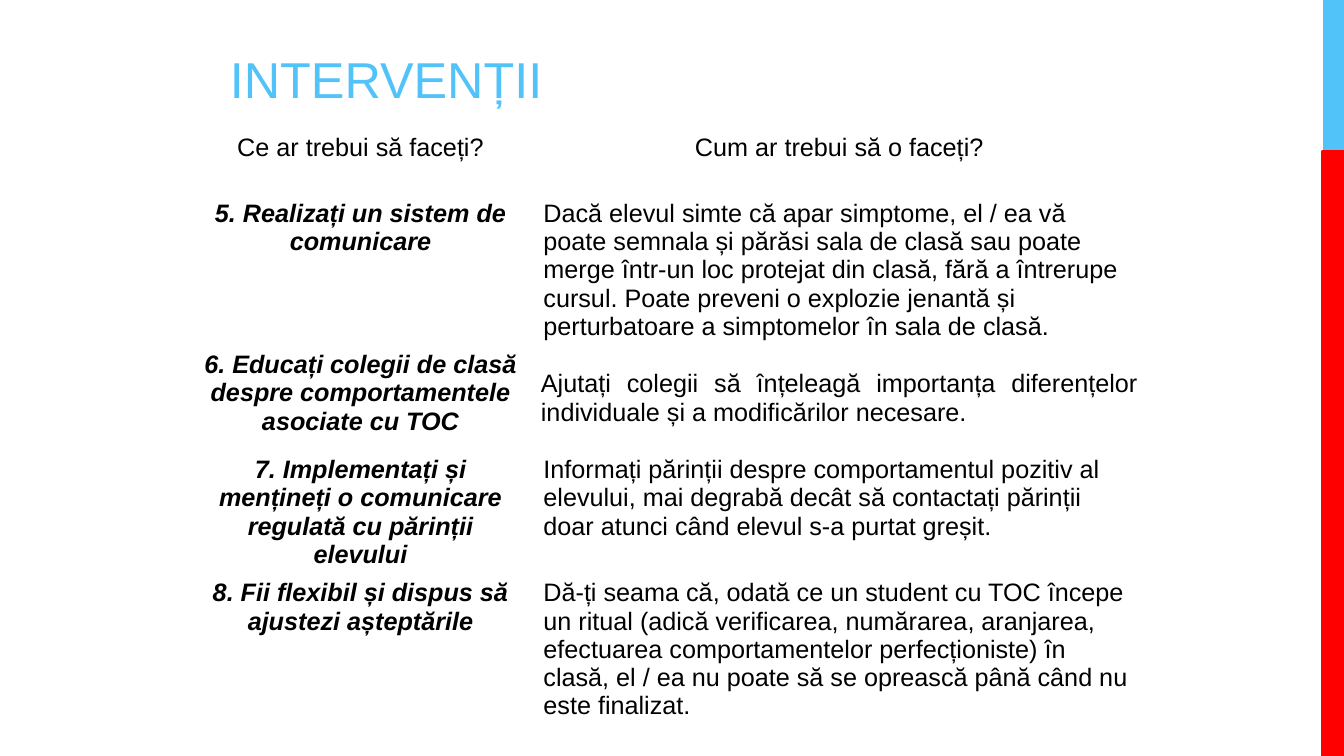
from pptx import Presentation
from pptx.dml.color import RGBColor
from pptx.enum.shapes import MSO_SHAPE
from pptx.enum.text import MSO_ANCHOR, MSO_AUTO_SIZE, PP_ALIGN
from pptx.util import Pt

RECT = MSO_SHAPE.RECTANGLE
TOP, MIDDLE, BOTTOM = MSO_ANCHOR.TOP, MSO_ANCHOR.MIDDLE, MSO_ANCHOR.BOTTOM
LEFT, CENTER, JUSTIFY = PP_ALIGN.LEFT, PP_ALIGN.CENTER, PP_ALIGN.JUSTIFY
NO_FIT = MSO_AUTO_SIZE.NONE

BLUE = RGBColor(0x51, 0xC3, 0xF9)
RED = RGBColor(0xFF, 0x00, 0x00)
BLACK = RGBColor(0x00, 0x00, 0x00)

HEADERS = ("Ce ar trebui să faceți?", "Cum ar trebui să o faceți?")
INTERVENTIONS = [
    ("5. Realizați un sistem de comunicare",
     "Dacă elevul simte că apar simptome, el / ea vă poate semnala și părăsi sala de clasă "
     "sau poate merge într-un loc protejat din clasă, fără a întrerupe cursul. Poate preveni "
     "o explozie jenantă și perturbatoare a simptomelor în sala de clasă."),
    ("6. Educați colegii de clasă despre comportamentele asociate cu TOC",
     "Ajutați colegii să înțeleagă importanța diferențelor individuale și a modificărilor "
     "necesare."),
    ("7. Implementați și mențineți o comunicare regulată cu părinții elevului",
     "Informați părinții despre comportamentul pozitiv al elevului, mai degrabă decât să "
     "contactați părinții doar atunci când elevul s-a purtat greșit."),
    ("8. Fii flexibil și dispus să ajustezi așteptările",
     "Dă-ți seama că, odată ce un student cu TOC începe un ritual (adică verificarea, "
     "numărarea, aranjarea, efectuarea comportamentelor perfecționiste) în clasă, el / ea nu "
     "poate să se oprească până când nu este finalizat."),
]
JUSTIFIED_ROW = 2


class SlideBuilder:
    font = "Arial"
    title_size = 36
    body_size = 18

    def __init__(self, prs):
        self.s = prs.slides.add_slide(prs.slide_layouts[5])

    def run(self, p, text, size, color, emphasis=False):
        r = p.add_run()
        r.text = text
        r.font.name = self.font
        r.font.size = Pt(size)
        r.font.bold = r.font.italic = emphasis
        r.font.color.rgb = color

    def bar(self, x, y, w, h, color, line_width=0):
        sp = self.s.shapes.add_shape(RECT, Pt(x), Pt(y), Pt(w), Pt(h))
        sp.shadow.inherit = False
        sp.fill.solid()
        sp.fill.fore_color.rgb = color
        if line_width:
            sp.line.color.rgb = color
            sp.line.width = Pt(line_width)
        else:
            sp.line.fill.background()

    def title(self, text, x, y, w, h):
        sp = self.s.shapes.title
        sp.left, sp.top, sp.width, sp.height = Pt(x), Pt(y), Pt(w), Pt(h)
        tf = sp.text_frame
        tf.auto_size = NO_FIT
        tf.vertical_anchor = BOTTOM
        p = tf.paragraphs[0]
        p.alignment = LEFT
        self.run(p, text, self.title_size, BLUE)

    def cell(self, cell, text, align, emphasis=False):
        cell.fill.background()
        cell.vertical_anchor = TOP
        p = cell.text_frame.paragraphs[0]
        p.alignment = align
        self.run(p, text, self.body_size, BLACK, emphasis)

    def table(self, x, y, widths, heights):
        frame = self.s.shapes.add_table(len(heights), len(widths), Pt(x), Pt(y),
                                        Pt(sum(widths)), Pt(sum(heights)))
        table = frame.table
        table.first_row = table.horz_banding = False
        for column, width in zip(table.columns, widths):
            column.width = Pt(width)
        for row, height in zip(table.rows, heights):
            row.height = Pt(height)
        for col, text in enumerate(HEADERS):
            self.cell(table.cell(0, col), text, CENTER)
        for row, (what, how) in enumerate(INTERVENTIONS, 1):
            self.cell(table.cell(row, 0), what, CENTER, True)
            self.cell(table.cell(row, 1), how, JUSTIFY if row == JUSTIFIED_ROW else LEFT)
        centred = table.cell(JUSTIFIED_ROW, 1)
        centred.vertical_anchor = MIDDLE
        centred.margin_left = centred.margin_right = Pt(5.4)
        centred.margin_top = centred.margin_bottom = 0


def main():
    prs = Presentation()
    prs.slide_width, prs.slide_height = Pt(960), Pt(540)
    slide = SlideBuilder(prs)
    slide.bar(945, 0, 15, 108, BLUE)
    slide.bar(945, 108, 15, 432, RED, 2.25)
    slide.title("INTERVENȚII", 157, 21, 456, 60)
    slide.table(134, 92, (247, 437), (47, 108, 75, 88, 108))
    prs.save("out.pptx")


if __name__ == "__main__":
    main()
